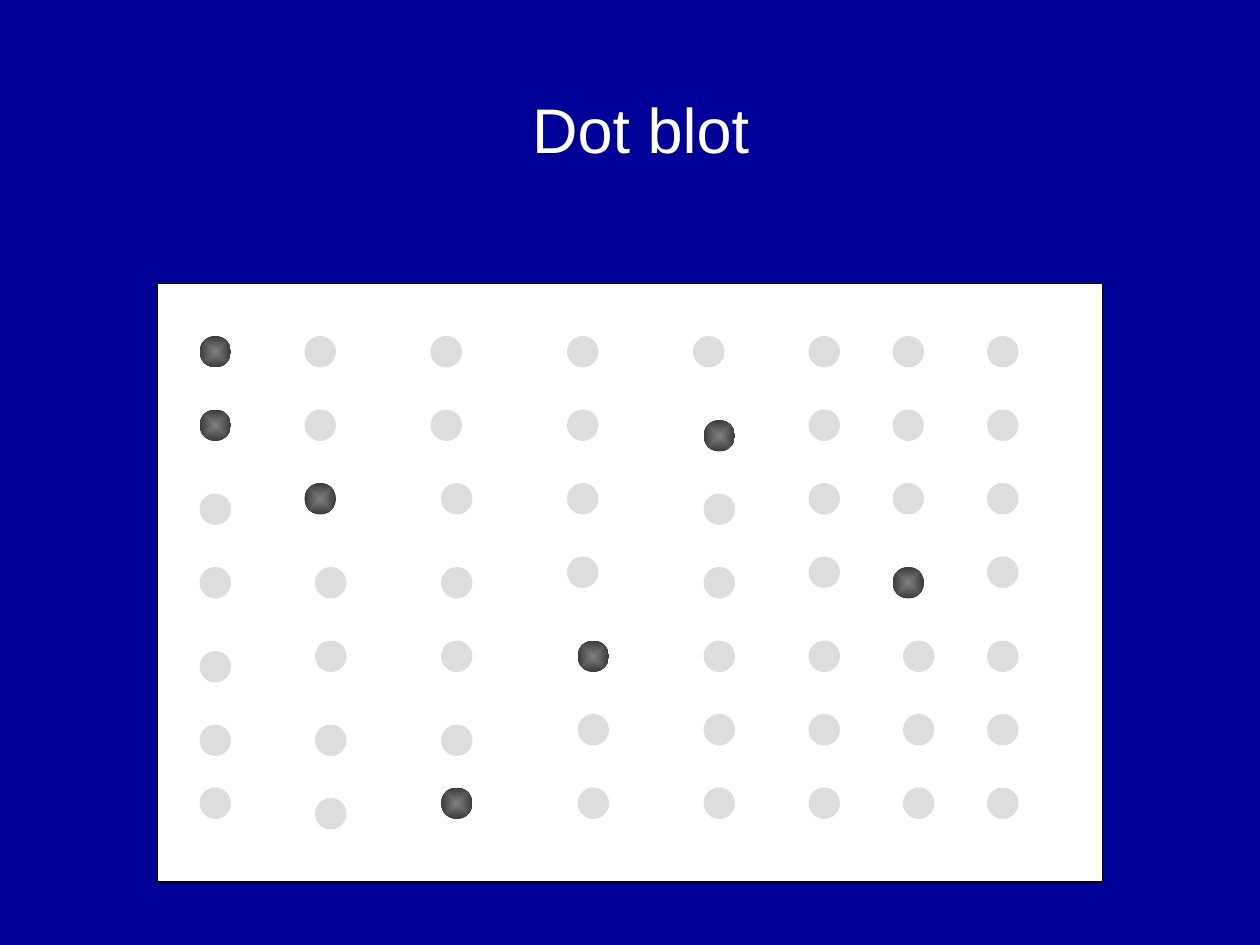
from pptx import Presentation
from pptx.dml.color import RGBColor
from pptx.enum.shapes import MSO_SHAPE
from pptx.enum.text import MSO_ANCHOR, PP_ALIGN
from pptx.oxml.ns import qn
from pptx.util import Inches, Pt
from lxml import etree

RECTANGLE, OVAL = MSO_SHAPE.RECTANGLE, MSO_SHAPE.OVAL
CENTER, MIDDLE = PP_ALIGN.CENTER, MSO_ANCHOR.MIDDLE

NAVY = RGBColor(0x00, 0x00, 0x99)
WHITE = RGBColor(0xFF, 0xFF, 0xFF)
BLACK = RGBColor(0x00, 0x00, 0x00)
PALE = RGBColor(0xDD, 0xDD, 0xDD)
GRAY = RGBColor(0x80, 0x80, 0x80)

TITLE = "Dot blot"
TITLE_BOX = (3.67, 0.67, 2.83, 0.7)
TITLE_FONT = {"name": "Arial", "size": Pt(36), "bold": False}
MEMBRANE_BOX = (1.25, 2.25, 7.5, 4.75)

UNITS_PER_INCH = 12
DOT_SIZE = 0.25
ROWS = 7
EDGE_SHADE = 46275
BLOT_COLUMNS = [
    {"left": 19, "shift_from": ROWS, "tops": (32, 39, 47, 54, 62, 69, 75), "positive": (0, 1)},
    {"left": 29, "shift_from": 3, "tops": (32, 39, 46, 54, 61, 69, 76), "positive": (2,)},
    {"left": 41, "shift_from": 2, "tops": (32, 39, 46, 54, 61, 69, 75), "positive": (6,)},
    {"left": 54, "shift_from": 4, "tops": (32, 39, 46, 53, 61, 68, 75), "positive": (4,)},
    {"left": 66, "shift_from": 1, "tops": (32, 40, 47, 54, 61, 68, 75), "positive": (1,)},
    {"left": 77, "shift_from": ROWS, "tops": (32, 39, 46, 53, 61, 68, 75), "positive": ()},
    {"left": 85, "shift_from": 4, "tops": (32, 39, 46, 54, 61, 68, 75), "positive": (3,)},
    {"left": 94, "shift_from": ROWS, "tops": (32, 39, 46, 53, 61, 68, 75), "positive": ()},
]


def add_filled(slide, kind, box, color):
    shape = slide.shapes.add_shape(kind, *map(Inches, box))
    shape.shadow.inherit = False
    shape.fill.solid()
    shape.fill.fore_color.rgb = color
    shape.line.fill.background()
    return shape


def shade_from_center(dot):
    dot.fill.gradient()
    for stop in dot.fill.gradient_stops:
        stop.color.rgb = GRAY
    gradient = dot._element.spPr.find(qn("a:gradFill"))
    edge = gradient.findall(".//" + qn("a:srgbClr"))[-1]
    etree.SubElement(edge, qn("a:gamma"))
    etree.SubElement(edge, qn("a:shade"), val=str(EDGE_SHADE))
    etree.SubElement(edge, qn("a:invGamma"))
    gradient.remove(gradient.find(qn("a:lin")))
    focus = etree.SubElement(gradient, qn("a:path"), {"path": "shape"})
    etree.SubElement(focus, qn("a:fillToRect"), dict.fromkeys("ltrb", "50000"))


def add_title(slide):
    title = slide.shapes.title
    title.left, title.top, title.width, title.height = map(Inches, TITLE_BOX)
    title.text_frame.text = TITLE
    title.text_frame.vertical_anchor = MIDDLE
    paragraph = title.text_frame.paragraphs[0]
    paragraph.alignment = CENTER
    font = paragraph.runs[0].font
    for attribute, value in TITLE_FONT.items():
        setattr(font, attribute, value)
    font.color.rgb = WHITE


def add_blot(slide):
    membrane = add_filled(slide, RECTANGLE, MEMBRANE_BOX, WHITE)
    membrane.line.color.rgb = BLACK
    membrane.line.width = Pt(0.75)
    for column in BLOT_COLUMNS:
        for row, top in enumerate(column["tops"]):
            left = column["left"] + (row >= column["shift_from"])
            box = (left / UNITS_PER_INCH, top / UNITS_PER_INCH, DOT_SIZE, DOT_SIZE)
            dot = add_filled(slide, OVAL, box, PALE)
            if row in column["positive"]:
                shade_from_center(dot)


def main():
    deck = Presentation()
    deck.slide_width, deck.slide_height = Inches(10), Inches(7.5)
    slide = deck.slides.add_slide(deck.slide_layouts[5])
    slide.background.fill.solid()
    slide.background.fill.fore_color.rgb = NAVY
    add_title(slide)
    add_blot(slide)
    deck.save("out.pptx")


if __name__ == "__main__":
    main()
